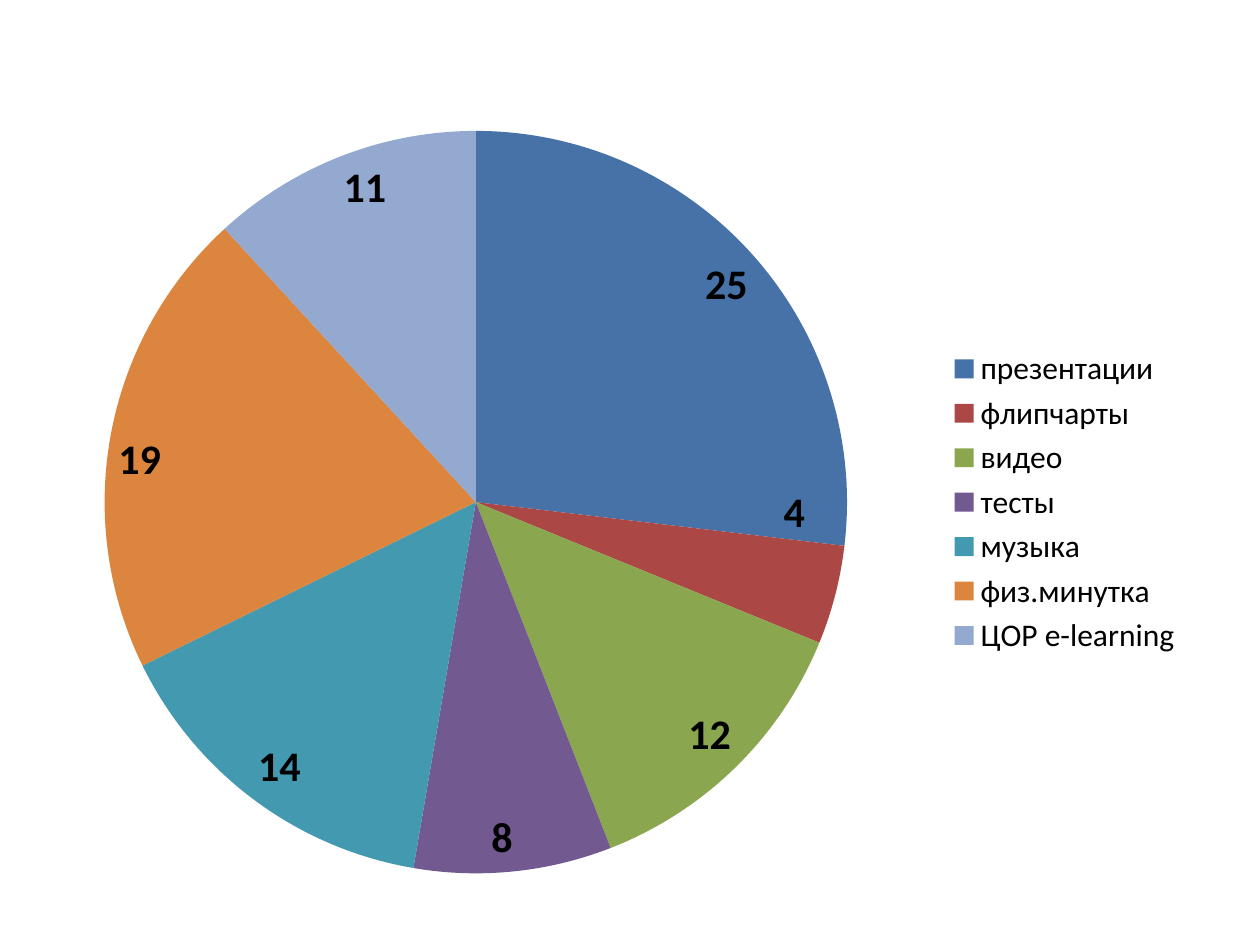
from dataclasses import dataclass

from lxml import etree
from pptx import Presentation
from pptx.chart import data as cd
from pptx.dml import color as dc
from pptx.enum import chart as ec
from pptx.oxml import ns
from pptx.util import Pt


@dataclass(frozen=True)
class Theme:
    font: str = "Calibri"
    ink: str = "000000"
    base: int = 10
    key: int = 18
    label: int = 24
    fills: tuple = ("4672A8", "AB4744", "8AA64F", "725990",
                    "4299B0", "DC853E", "93A9CF")


THEME = Theme()
ITEMS = {
    "презентации": 25,
    "флипчарты": 4,
    "видео": 12,
    "тесты": 8,
    "музыка": 14,
    "физ.минутка": 19,
    "ЦОР e-learning": 11,
}


def style(font, size, bold=False):
    font.name = THEME.font
    font.size = Pt(size)
    font.bold = bold
    font.color.rgb = dc.RGBColor.from_string(THEME.ink)


def layout(**parts):
    """Make a manual chart layout, in fractions of the chart box."""
    root = etree.Element(ns.qn("c:layout"))
    man = etree.SubElement(root, ns.qn("c:manualLayout"))
    for name, val in parts.items():
        etree.SubElement(man, ns.qn("c:" + name)).set("val", str(val))
    return root


def add_pie(slide, left, top, width, height):
    data = cd.CategoryChartData()
    data.categories = list(ITEMS)
    data.add_series("Series 1", list(ITEMS.values()))
    chart = slide.shapes.add_chart(
        ec.XL_CHART_TYPE.PIE, Pt(left), Pt(top), Pt(width), Pt(height), data
    ).chart
    chart.has_title = False
    style(chart.font, THEME.base)

    # Legend
    chart.has_legend = True
    chart.legend.position = ec.XL_LEGEND_POSITION.RIGHT
    chart.legend.include_in_layout = False
    style(chart.legend.font, THEME.key)

    # Slices
    plot = chart.plots[0]
    plot.vary_by_categories = True
    series = plot.series[0]
    for i, rgb in enumerate(THEME.fills):
        fill = series.points[i].format.fill
        fill.solid()
        fill.fore_color.rgb = dc.RGBColor.from_string(rgb)

    # Value labels, the one on the thin slice moved up
    labels = series.data_labels
    labels.show_value = True
    labels.position = ec.XL_LABEL_POSITION.INSIDE_END
    style(labels.font, THEME.label, True)
    thin = series.points[1].data_label
    style(thin.font, THEME.label, True)
    thin.position = ec.XL_LABEL_POSITION.INSIDE_END
    mark = labels._element.find(ns.qn("c:dLbl"))
    mark.find(ns.qn("c:idx")).addnext(layout(x=-0.02, y=-0.07))

    # Plot area
    area = plot._element.getparent()
    old = area.find(ns.qn("c:layout"))
    if old is not None:
        area.remove(old)
    area.insert(0, layout(layoutTarget="inner", xMode="edge", yMode="edge",
                          x=0.06, y=0.02, w=0.64, h=0.96))


def main():
    deck = Presentation()
    deck.slide_width, deck.slide_height = Pt(720), Pt(540)
    slide = deck.slides.add_slide(deck.slide_layouts[6])
    add_pie(slide, 20, 66, 663, 442)
    deck.save("out.pptx")


if __name__ == "__main__":
    main()
